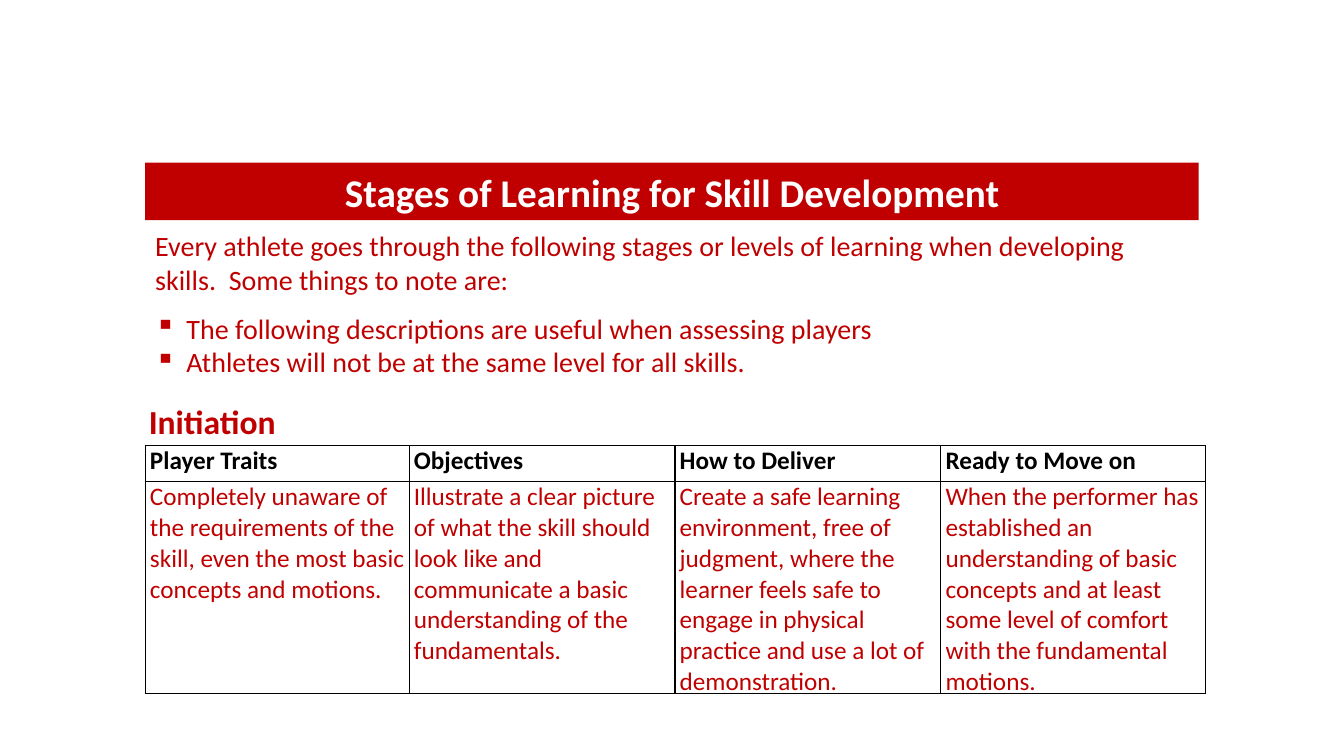
from lxml.etree import SubElement
from pptx import Presentation
from pptx.dml.color import RGBColor
from pptx.enum.shapes import MSO_SHAPE as Shape
from pptx.enum.text import MSO_ANCHOR as Anchor, PP_ALIGN as Align
from pptx.oxml.ns import qn
from pptx.util import Cm, Pt

RED, BLACK, WHITE = "C00000", "000000", "FFFFFF"
STAGE = {
    "Player Traits": "Completely unaware of the requirements of the skill, even the most "
                     "basic concepts and motions.",
    "Objectives": "Illustrate a clear picture of what the skill should look like and "
                  "communicate a basic understanding of the fundamentals.",
    "How to Deliver": "Create a safe learning environment, free of judgment, where the learner "
                      "feels safe to engage in physical practice and use a lot of demonstration.",
    "Ready to Move on": "When the performer has established an understanding of basic concepts "
                        "and at least some level of comfort with the fundamental motions.",
}


def color(value):
    return RGBColor.from_string(value)


class SlideBuilder:
    font = "Calibri"

    def __init__(self, slide):
        self.slide = slide

    def span(self, para, text, size, ink=RED, bold=False):
        span = para.add_run()
        span.text = text
        span.font.name = self.font
        span.font.size = Pt(size)
        span.font.bold = bold
        span.font.color.rgb = color(ink)

    def banner(self, text, left, top, width, height):
        box = self.slide.shapes.add_shape(
            Shape.RECTANGLE, Cm(left), Cm(top), Cm(width), Cm(height))
        box.shadow.inherit = False
        box.fill.solid()
        box.fill.fore_color.rgb = color(RED)
        box.line.fill.background()
        para = box.text_frame.paragraphs[0]
        para.alignment = Align.CENTER
        self.span(para, text, 28, WHITE, True)

    def textbox(self, left, top, width, height):
        box = self.slide.shapes.add_textbox(Cm(left), Cm(top), Cm(width), Cm(height))
        frame = box.text_frame
        frame.word_wrap = True
        frame.vertical_anchor = Anchor.MIDDLE
        return frame

    def bullet(self, frame, text, size, before=0):
        para = frame.add_paragraph()
        props = para._p.get_or_add_pPr()
        props.set("marL", str(Cm(0.79)))
        props.set("indent", str(-Cm(0.79)))
        SubElement(props, qn("a:buChar"), char="▪")
        para.space_before = Pt(before)
        self.span(para, text, size)

    def border(self, cell):
        props = cell._tc.get_or_add_tcPr()
        for side in ("lnL", "lnR", "lnT", "lnB"):
            line = SubElement(props, qn(f"a:{side}"), w=str(Pt(1)))
            fill = SubElement(line, qn("a:solidFill"))
            SubElement(fill, qn("a:srgbClr"), val=BLACK)

    def table(self, rows, left, top, widths, heights):
        table = self.slide.shapes.add_table(
            len(rows), len(widths), Cm(left), Cm(top),
            Cm(sum(widths)), Cm(sum(heights))).table
        table.first_row = table.horz_banding = False
        for column, width in zip(table.columns, widths):
            column.width = Cm(width)
        for index, (row, height) in enumerate(zip(rows, heights)):
            table.rows[index].height = Cm(height)
            header = index == 0
            for cell, text in zip(table.rows[index].cells, row):
                self.border(cell)
                cell.fill.background()
                cell.margin_left = cell.margin_right = Cm(0.12)
                cell.margin_top = cell.margin_bottom = 0
                self.span(cell.text_frame.paragraphs[0], text, 18,
                          BLACK if header else RED, header)


def main():
    deck = Presentation()
    deck.slide_width, deck.slide_height = Cm(33.87), Cm(19.05)
    page = SlideBuilder(deck.slides.add_slide(deck.slide_layouts[6]))

    page.banner("Stages of Learning for Skill Development", 3.66, 4.1, 26.55, 1.45)

    intro = page.textbox(3.66, 5.62, 26.55, 4.06)
    page.span(intro.paragraphs[0], "Every athlete goes through the following stages or levels "
              "of learning when developing skills.  Some things to note are:", 20)
    page.bullet(intro, "The following descriptions are useful when assessing players", 20, 11)
    page.bullet(intro, "Athletes will not be at the same level for all skills.", 20)

    page.table([list(STAGE), list(STAGE.values())], 3.66, 11.23,
               [6.65, 6.7, 6.7, 6.67], [0.91, 5.34])

    heading = page.textbox(3.5, 9.97, 26.55, 1.27)
    page.span(heading.paragraphs[0], "Initiation", 24, RED, True)

    deck.save("out.pptx")


if __name__ == "__main__":
    main()
